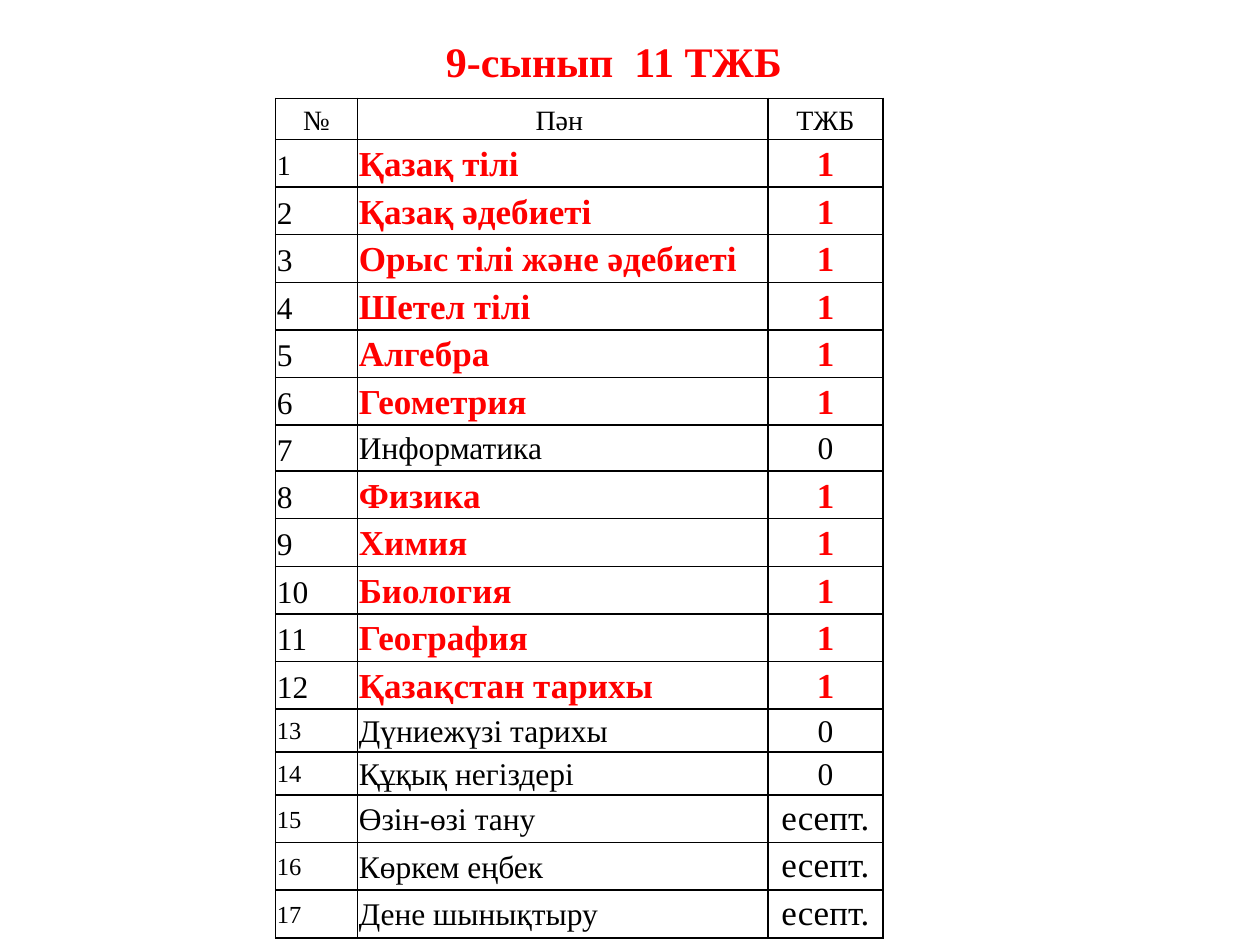
from pptx import Presentation
from pptx.dml.color import RGBColor
from pptx.enum import text
from pptx.oxml import parse_xml
from pptx.oxml.ns import nsdecls
from pptx.util import Pt

RED, BLACK = "FF0000", "000000"
LEFT, MID = text.PP_ALIGN.JUSTIFY, text.PP_ALIGN.CENTER


def write(para, words, size, color=BLACK, bold=False):
    run = para.add_run()
    run.text = words
    font = run.font
    font.name = "Times New Roman"
    font.size = Pt(size)
    font.bold = bold
    font.color.rgb = RGBColor.from_string(color)


def fill(cell, words, size, align, color=BLACK, bold=False, line=1.07, after=0, mid=True):
    cell.margin_left = cell.margin_right = Pt(0.75)
    cell.margin_top = cell.margin_bottom = Pt(0.75)
    cell.vertical_anchor = text.MSO_ANCHOR.MIDDLE if mid else text.MSO_ANCHOR.TOP
    props = cell._tc.get_or_add_tcPr()
    for side in "LRTB":
        props.append(parse_xml(
            f'<a:ln{side} {nsdecls("a")} w="{Pt(1)}"><a:solidFill>'
            f'<a:srgbClr val="{BLACK}"/></a:solidFill></a:ln{side}>'))
    cell.fill.background()
    para = cell.text_frame.paragraphs[0]
    para.alignment = align
    para.line_spacing = line
    para.space_after = Pt(after)
    write(para, words, size, color, bold)


deck = Presentation()
deck.slide_width, deck.slide_height = Pt(720), Pt(540)
slide = deck.slides.add_slide(deck.slide_layouts[6])

title = slide.shapes.add_textbox(Pt(247.7), Pt(16.6), Pt(214.5), Pt(36)).text_frame
title.word_wrap = False
title.auto_size = text.MSO_AUTO_SIZE.SHAPE_TO_FIT_TEXT
write(title.paragraphs[0], "9-сынып  11 ТЖБ", 24, RED, True)

items = [
    ("Қазақ тілі", "1"), ("Қазақ әдебиеті", "1"), ("Орыс тілі және әдебиеті", "1"),
    ("Шетел тілі", "1"), ("Алгебра", "1"), ("Геометрия", "1"), ("Информатика", "0"),
    ("Физика", "1"), ("Химия", "1"), ("Биология", "1"), ("География", "1"),
    ("Қазақстан тарихы", "1"), ("Дүниежүзі тарихы", "0"), ("Құқық негіздері", "0"),
    ("Өзін-өзі тану", "есепт."), ("Көркем еңбек", "есепт."), ("Дене шынықтыру", "есепт."),
]

grid = slide.shapes.add_table(len(items) + 1, 3, Pt(157.5), Pt(56.2), Pt(347), Pt(465)).table
grid.first_row = grid.horz_banding = False
for col, width in zip(grid.columns, (46.8, 234.7, 65.5)):
    col.width = Pt(width)

grid.rows[0].height = Pt(23)
for col, head in enumerate(("№", "Пән ", "ТЖБ")):
    fill(grid.cell(0, col), head, 16, MID, line=1.15, after=1)

for num, (name, mark) in enumerate(items, 1):
    late = num > 12
    test = mark == "1"
    word = mark == "есепт."
    grid.rows[num].height = Pt(24 if late and not word else 26)
    look = {"color": RED, "bold": True} if test else {}
    if late:
        fill(grid.cell(num, 0), str(num), 14, LEFT)
    else:
        fill(grid.cell(num, 0), str(num), 16 if num == 1 else 18, LEFT, line=1.15, after=1)
    fill(grid.cell(num, 1), name, 20 if test else 18, LEFT, **look)
    fill(grid.cell(num, 2), mark, 20 if test or word else 18, MID,
         after=8 if word else 0, mid=not word, **look)

deck.save("out.pptx")
